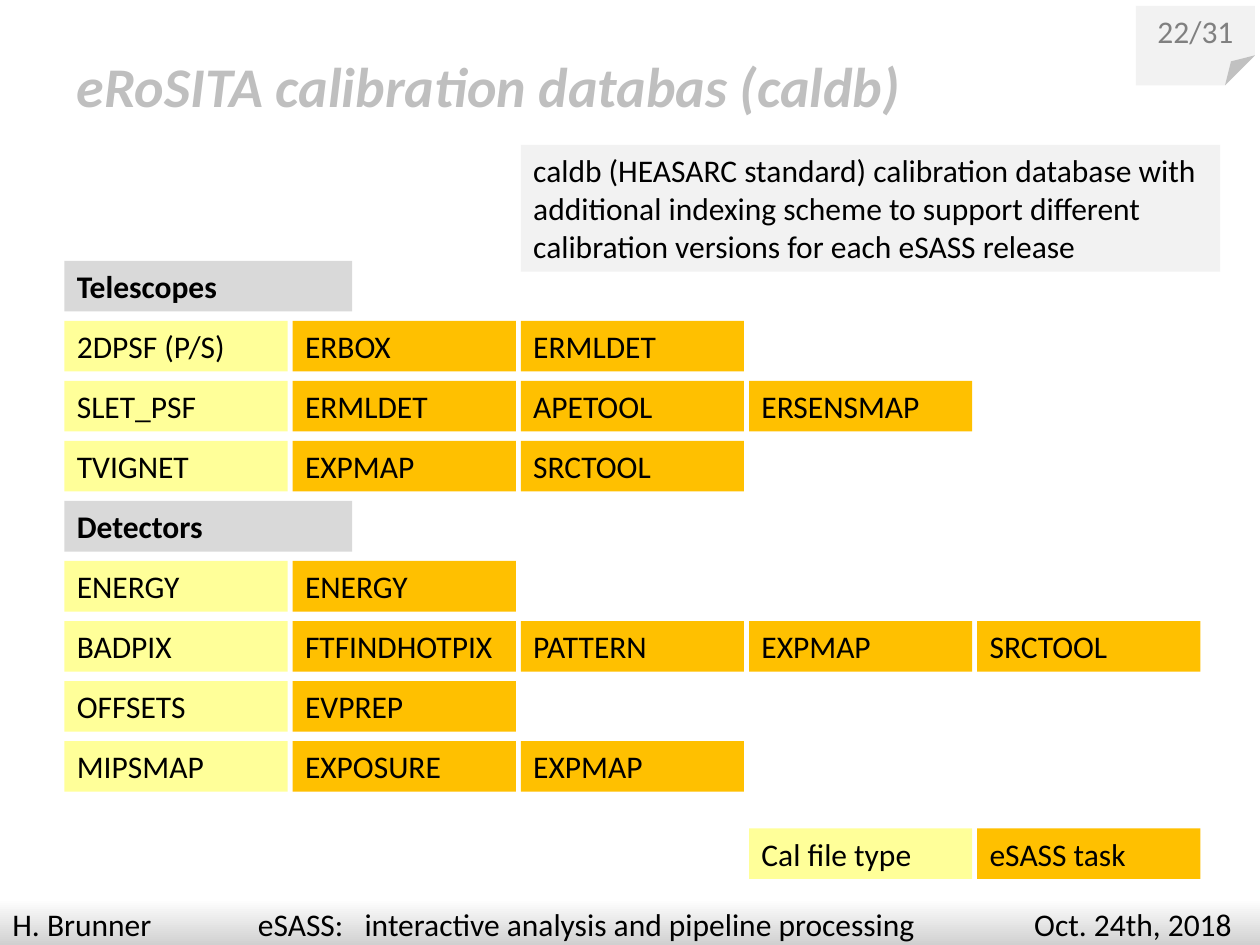
from lxml.etree import SubElement
from pptx import Presentation
from pptx.dml.color import RGBColor
from pptx.enum.shapes import MSO_SHAPE as Shape
from pptx.enum.text import MSO_ANCHOR as Anchor, MSO_AUTO_SIZE as AutoSize, PP_ALIGN as Align
from pptx.oxml.ns import qn
from pptx.util import Cm, Pt

BLACK = RGBColor(0, 0, 0)
WHITE = RGBColor(255, 255, 255)
TITLE_GRAY = RGBColor(0xBF, 0xBF, 0xBF)
NUMBER_GRAY = RGBColor(0x80, 0x80, 0x80)
HEADING_FILL = RGBColor(0xD9, 0xD9, 0xD9)
PALE_GRAY = RGBColor(0xF2, 0xF2, 0xF2)
FOOTER_GRAY = RGBColor(0xCC, 0xCC, 0xCC)
FILE_YELLOW = RGBColor(0xFF, 0xFF, 0x99)
TASK_ORANGE = RGBColor(0xFF, 0xC0, 0)

FONT = "Calibri"
CELL_WIDTH, CELL_HEIGHT = Cm(4.5), Cm(1.02)
COLUMN_STEP, ROW_STEP = Cm(4.6), Cm(1.21)
HEADING_WIDTH = Cm(5.8)

# Each group: heading, then calibration file types with the tasks using them
GROUPS = [
    ("Telescopes", [
        ("2DPSF (P/S)", ["ERBOX", "ERMLDET"]),
        ("SLET_PSF", ["ERMLDET", "APETOOL", "ERSENSMAP"]),
        ("TVIGNET", ["EXPMAP", "SRCTOOL"]),
    ]),
    ("Detectors", [
        ("ENERGY", ["ENERGY"]),
        ("BADPIX", ["FTFINDHOTPIX", "PATTERN", "EXPMAP", "SRCTOOL"]),
        ("OFFSETS", ["EVPREP"]),
        ("MIPSMAP", ["EXPOSURE", "EXPMAP"]),
    ]),
]


def write(shape, text, size=18, color=BLACK, bold=False, italic=False,
          align=Align.LEFT, anchor=Anchor.TOP):
    frame = shape.text_frame
    frame.word_wrap = True
    frame.auto_size = AutoSize.NONE
    frame.vertical_anchor = anchor
    paragraph = frame.paragraphs[0]
    paragraph.alignment = align
    run = paragraph.add_run()
    run.text = text
    font = run.font
    font.name, font.size, font.bold, font.italic = FONT, Pt(size), bold, italic
    font.color.rgb = color
    return paragraph


def add_panel(slide, box, fill, kind=Shape.RECTANGLE):
    shape = slide.shapes.add_shape(kind, *box)
    shape.shadow.inherit = False
    shape.fill.solid()
    shape.fill.fore_color.rgb = fill
    shape.line.fill.background()
    return shape


def add_cell(slide, left, top, text, fill, width=CELL_WIDTH, bold=False):
    write(add_panel(slide, (left, top, width, CELL_HEIGHT), fill), text, bold=bold)


def add_title(slide, box):
    title = slide.shapes.add_textbox(*box)
    write(title, "eRoSITA calibration databas (caldb)", 32, TITLE_GRAY, bold=True, italic=True)


def add_page_number(slide, box):
    corner = add_panel(slide, box, PALE_GRAY, Shape.FOLDED_CORNER)
    # Size of the fold, which has no preset adjustment to set
    adjustments = next(corner._element.iter(qn("a:avLst")))
    SubElement(adjustments, qn("a:gd"), name="adj", fmla="val 37700")
    write(corner, "22/31", color=NUMBER_GRAY, align=Align.CENTER, anchor=Anchor.MIDDLE)


def add_note(slide, box):
    write(add_panel(slide, box, PALE_GRAY),
          "caldb (HEASARC standard) calibration database with additional indexing "
          "scheme to support different calibration versions for each eSASS release")


def add_calibration_grid(slide, left, top):
    for heading, file_rows in GROUPS:
        add_cell(slide, left, top, heading, HEADING_FILL, HEADING_WIDTH, bold=True)
        top += ROW_STEP
        for file_type, tasks in file_rows:
            add_cell(slide, left, top, file_type, FILE_YELLOW)
            for column, task in enumerate(tasks, start=1):
                add_cell(slide, left + column * COLUMN_STEP, top, task, TASK_ORANGE)
            top += ROW_STEP


def add_legend(slide, left, top):
    add_cell(slide, left, top, "Cal file type", FILE_YELLOW)
    add_cell(slide, left + COLUMN_STEP, top, "eSASS task", TASK_ORANGE)


def add_footer(slide, box):
    bar = add_panel(slide, box, WHITE)
    bar.fill.gradient()
    bar.fill.gradient_angle = 270
    for stop, color in zip(bar.fill.gradient_stops, (WHITE, FOOTER_GRAY)):
        stop.color.rgb = color
    paragraph = write(bar, "H. Brunner\teSASS:\tinteractive analysis and pipeline processing"
                           "\tOct. 24th, 2018")
    # Tab stops for topic, subtitle and date
    properties = paragraph._p.get_or_add_pPr()
    tabs = SubElement(properties, qn("a:tabLst"))
    for position in (4.95, 7.1, 20.6):
        SubElement(tabs, qn("a:tab"), pos=str(Cm(position)), algn="l")


def main():
    presentation = Presentation()
    presentation.slide_width, presentation.slide_height = Cm(25.4), Cm(19.05)
    slide = presentation.slides.add_slide(presentation.slide_layouts[6])

    left = Cm(1.3)
    add_calibration_grid(slide, left, Cm(5.26))
    add_legend(slide, left + 3 * COLUMN_STEP, Cm(16.7))
    add_note(slide, (left + 2 * COLUMN_STEP, Cm(2.92), Cm(14.1), Cm(2.56)))
    add_page_number(slide, (Cm(22.9), Cm(0.12), Cm(2.4), Cm(1.6)))
    add_title(slide, (left, Cm(0.92), Cm(19.8), Cm(1.62)))
    add_footer(slide, (0, Cm(18.12), presentation.slide_width, CELL_HEIGHT))

    presentation.save("out.pptx")


if __name__ == "__main__":
    main()
